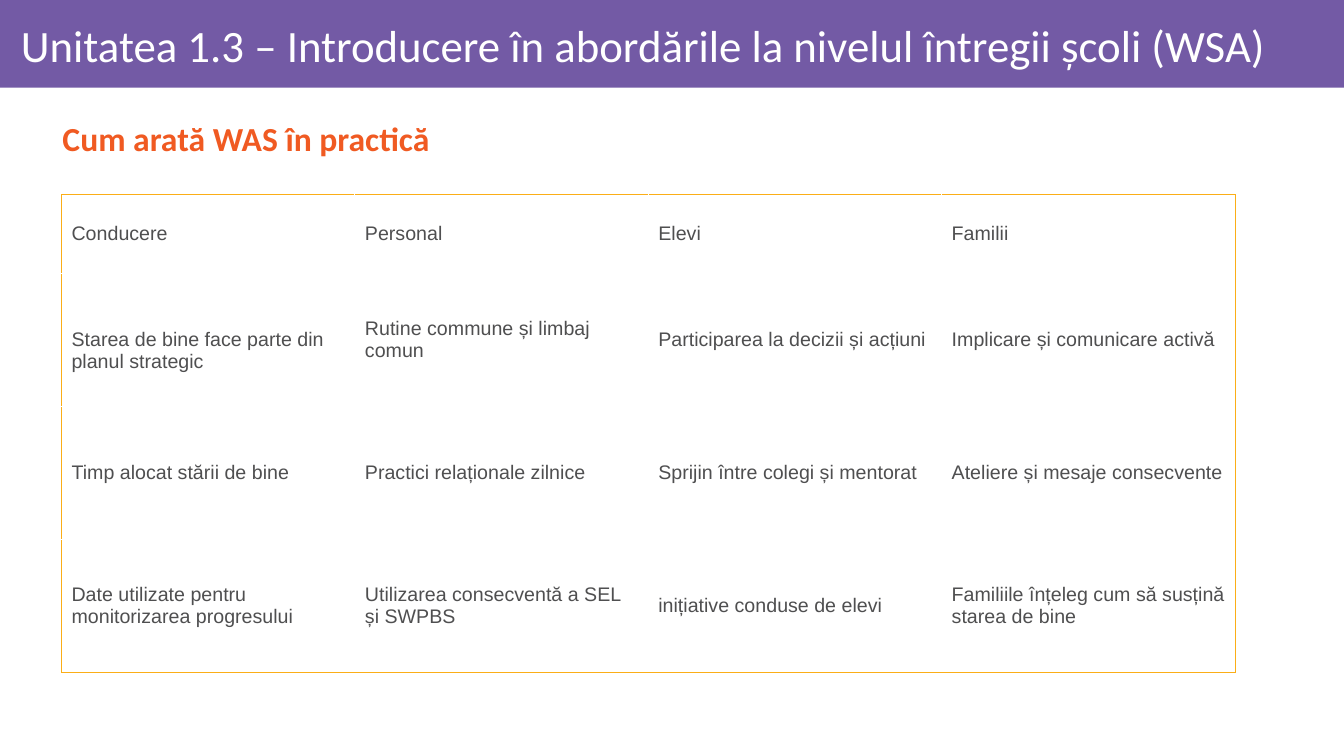
import pptx
import pptx.util
import pptx.dml.color
import pptx.enum.shapes
import pptx.enum.text
import pptx.oxml
import pptx.oxml.ns

Inches = pptx.util.Inches
RGBColor = pptx.dml.color.RGBColor
MIDDLE = pptx.enum.text.MSO_ANCHOR.MIDDLE
ALIGN = pptx.enum.text.PP_ALIGN

TITLE = "Unitatea 1.3 – Introducere în abordările la nivelul întregii școli (WSA)"
SUBTITLE = "Cum arată WAS în practică"
PRACTICES = [
    ("Conducere", "Personal", "Elevi", "Familii"),
    ("Starea de bine face parte din planul strategic", "Rutine commune și limbaj comun",
     "Participarea la decizii și acțiuni", "Implicare și comunicare activă"),
    ("Timp alocat stării de bine", "Practici relaționale zilnice",
     "Sprijin între colegi și mentorat", "Ateliere și mesaje consecvente"),
    ("Date utilizate pentru monitorizarea progresului", "Utilizarea consecventă a SEL și SWPBS",
     "inițiative conduse de elevi", "Familiile înțeleg cum să susțină starea de bine"),
]
LOWERED_CELL = (1, 0)

PURPLE = RGBColor(0x73, 0x5A, 0xA5)
ORANGE = RGBColor(0xF0, 0x5A, 0x22)
GREY = RGBColor(0x4F, 0x4F, 0x50)
WHITE = RGBColor(0xFF, 0xFF, 0xFF)
YELLOW = RGBColor(0xFB, 0xAE, 0x17)

WIDTH, HEIGHT = 13.33, 7.5
BANNER_HEIGHT = 0.87
TABLE_LEFT, TABLE_TOP = 0.61, 1.93
COLUMN_WIDTH, HEADER_HEIGHT, ROW_HEIGHT = 2.91, 0.78, 1.32


def write_text(frame, text, *, size, color, font="Calibri", bold=False,
               align=ALIGN.LEFT, line_spacing=None):
    frame.word_wrap = True
    para = frame.paragraphs[0]
    para.alignment = align
    if line_spacing:
        para.line_spacing = line_spacing
    span = para.add_run()
    span.text = text
    span.font.size = pptx.util.Pt(size)
    span.font.name = font
    span.font.bold = bold
    span.font.color.rgb = color


def add_text_box(page, area, margins, text, **text_format):
    box = page.shapes.add_textbox(*map(Inches, area))
    frame = box.text_frame
    frame.vertical_anchor = MIDDLE
    (frame.margin_left, frame.margin_top,
     frame.margin_right, frame.margin_bottom) = map(Inches, margins)
    write_text(frame, text, **text_format)


def draw_borders(cell, sides):
    """Draw thin yellow lines on the given sides, a subset of LRTB in that order."""
    properties = cell._tc.get_or_add_tcPr()
    for index, side in enumerate(sides):
        border = pptx.oxml.parse_xml(
            f'<a:ln{side} {pptx.oxml.ns.nsdecls("a")} w="{pptx.util.Pt(0.75)}">'
            f'<a:solidFill><a:srgbClr val="{YELLOW}"/></a:solidFill></a:ln{side}>')
        properties.insert(index, border)


def add_practice_table(page):
    rows, columns = len(PRACTICES), len(PRACTICES[0])
    heights = [HEADER_HEIGHT] + [ROW_HEIGHT] * (rows - 1)
    area = (TABLE_LEFT, TABLE_TOP, COLUMN_WIDTH * columns, sum(heights))
    table = page.shapes.add_table(rows, columns, *map(Inches, area)).table
    table.first_row = False
    table.horz_banding = False
    for column in table.columns:
        column.width = Inches(COLUMN_WIDTH)
    for r, (height, texts) in enumerate(zip(heights, PRACTICES)):
        table.rows[r].height = Inches(height)
        for c, text in enumerate(texts):
            cell = table.cell(r, c)
            cell.fill.background()
            cell.vertical_anchor = MIDDLE
            if (r, c) == LOWERED_CELL:
                cell.margin_top = Inches(0.27)
            write_text(cell.text_frame, text, size=14, color=GREY, font="Arial")
            outer = {"L": c == 0, "R": c == columns - 1, "T": r == 0, "B": r == rows - 1}
            draw_borders(cell, [side for side, drawn in outer.items() if drawn])


def main():
    deck = pptx.Presentation()
    deck.slide_width, deck.slide_height = Inches(WIDTH), Inches(HEIGHT)
    page = deck.slides.add_slide(deck.slide_layouts[6])

    banner = page.shapes.add_shape(pptx.enum.shapes.MSO_SHAPE.RECTANGLE, 0, 0,
                                   Inches(WIDTH), Inches(BANNER_HEIGHT))
    banner.shadow.inherit = False
    banner.fill.solid()
    banner.fill.fore_color.rgb = PURPLE
    banner.line.fill.background()

    add_text_box(page, (0.11, 0.09, 13.06, 0.78), (0.1, 0.06, 0.06, 0.06), TITLE,
                 size=32, color=WHITE, line_spacing=0.9)
    add_text_box(page, (0.27, 1.1, 13.06, 0.6), (0.35, 0.05, 0.1, 0.05), SUBTITLE,
                 size=24, color=ORANGE, bold=True, align=ALIGN.JUSTIFY, line_spacing=0.9)
    add_practice_table(page)
    deck.save("out.pptx")


if __name__ == "__main__":
    main()
